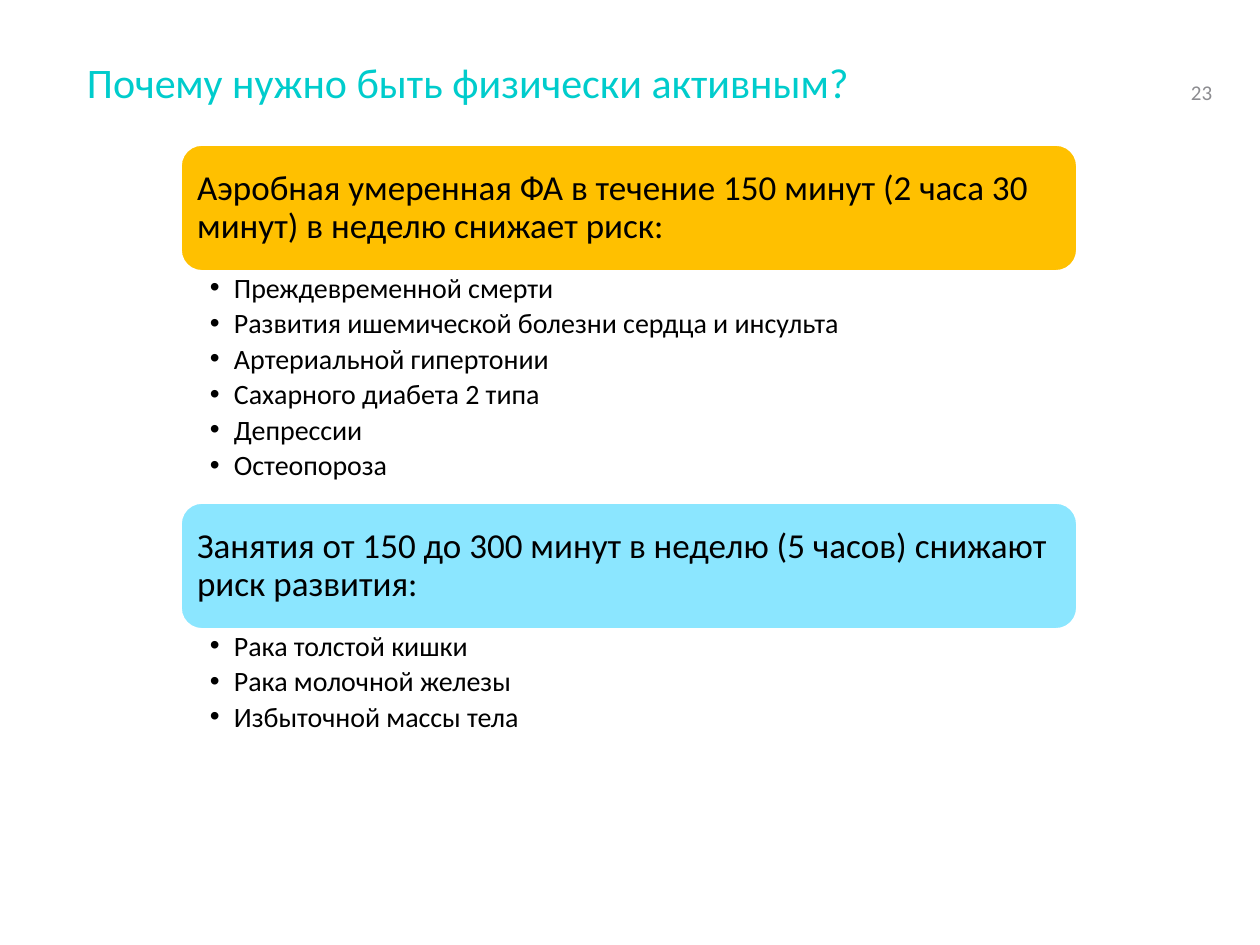
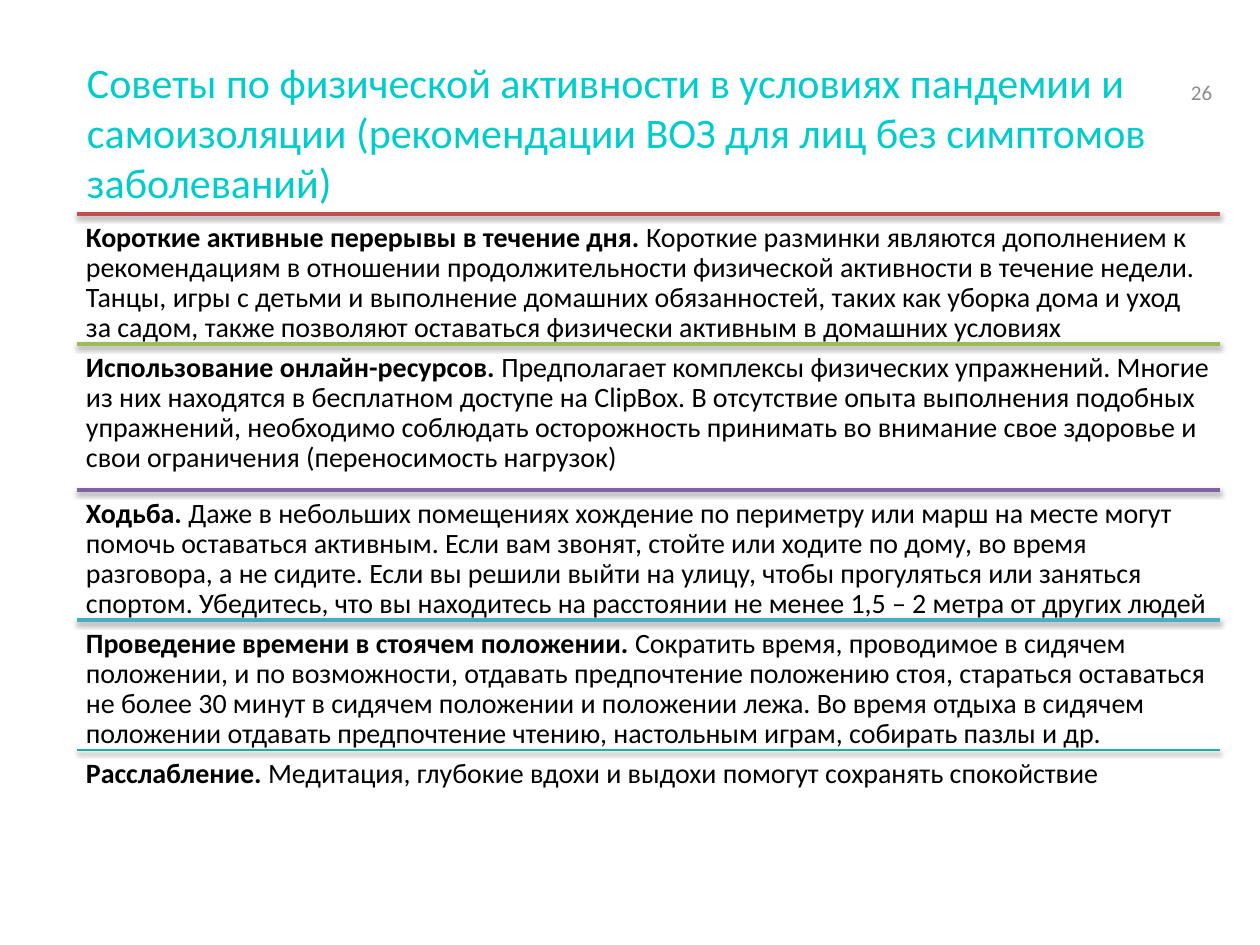
from lxml import etree
from pptx import Presentation
from pptx.dml.color import RGBColor
from pptx.enum.shapes import MSO_CONNECTOR, MSO_SHAPE
from pptx.enum.text import MSO_ANCHOR, PP_ALIGN
from pptx.oxml.ns import qn
from pptx.util import Emu, Pt

PX_PER_INCH = 126
FONT = "Calibri"
LEFT = PP_ALIGN.LEFT
TOP, MIDDLE, BOTTOM = MSO_ANCHOR.TOP, MSO_ANCHOR.MIDDLE, MSO_ANCHOR.BOTTOM
ROUNDED = MSO_SHAPE.ROUNDED_RECTANGLE
STRAIGHT = MSO_CONNECTOR.STRAIGHT

COLORS = {
    "title": "00CCCC",
    "number": "8C8C90",
    "text": "000000",
    "white": "FFFFFF",
    "amber": "FFC000",
    "sky": "8BE6FF",
    "red": "C0504D",
    "green": "9BBB59",
    "purple": "8064A2",
    "blue": "4BACC6",
    "teal": "1AB39F",
}

# Heading, card colour, height of the list below, list items
RISK_GROUPS = [
    ("Аэробная умеренная ФА в течение 150 минут (2 часа 30 минут) в неделю снижает риск:",
     "amber", 232,
     ["Преждевременной смерти",
      "Развития ишемической болезни сердца и инсульта",
      "Артериальной гипертонии",
      "Сахарного диабета 2 типа",
      "Депрессии",
      "Остеопороза"]),
    ("Занятия от 150 до 300 минут в неделю (5 часов) снижают риск развития:",
     "sky", 112,
     ["Рака толстой кишки",
      "Рака молочной железы",
      "Избыточной массы тела"]),
]

# Rule colour, rule width, row height, bold lead, advice
ADVICE_ROWS = [
    ("red", 2, 130, "Короткие активные перерывы в течение дня.",
     "Короткие разминки являются дополнением к рекомендациям в отношении "
     "продолжительности физической активности в течение недели. Танцы, игры с детьми "
     "и выполнение домашних обязанностей, таких как уборка дома и уход за садом, также "
     "позволяют оставаться физически активным в домашних условиях"),
    ("green", 2, 146, "Использование онлайн-ресурсов.",
     "Предполагает комплексы физических упражнений. Многие из них находятся в "
     "бесплатном доступе на ClipBox. В отсутствие опыта выполнения подобных "
     "упражнений, необходимо соблюдать осторожность принимать во внимание свое "
     "здоровье и свои ограничения (переносимость нагрузок)"),
    ("purple", 2, 130, "Ходьба.",
     "Даже в небольших помещениях хождение по периметру или марш на месте могут "
     "помочь оставаться активным. Если вам звонят, стойте или ходите по дому, во время "
     "разговора, а не сидите. Если вы решили выйти на улицу, чтобы прогуляться или "
     "заняться спортом. Убедитесь, что вы находитесь на расстоянии не менее "
     "1,5 – 2 метра от других людей"),
    ("blue", 2, 130, "Проведение времени в стоячем положении.",
     "Сократить время, проводимое в сидячем положении, и по возможности, отдавать "
     "предпочтение положению стоя, стараться оставаться не более 30 минут в сидячем "
     "положении и положении лежа. Во время отдыха в сидячем положении отдавать "
     "предпочтение чтению, настольным играм, собирать пазлы и др."),
    ("teal", 1, 130, "Расслабление.",
     "Медитация, глубокие вдохи и выдохи помогут сохранять спокойствие"),
]


def px(length):
    return Emu(round(length * 914400 / PX_PER_INCH))


def rgb(name):
    return RGBColor.from_string(COLORS[name])


# Text
def add_bullet(para, indent):
    properties = para._p.get_or_add_pPr()
    properties.set("marL", str(px(indent)))
    properties.set("indent", str(-px(indent)))
    etree.SubElement(properties, qn("a:buFont")).set("typeface", "Arial")
    etree.SubElement(properties, qn("a:buChar")).set("char", "•")


def write_text(shape, paragraphs, size=16, color="text", insets=(0, 0, 0, 0),
               anchor=TOP, wrap=True, line_spacing=None, space_after=0, bullet=0):
    """Each paragraph is a list of (text, bold) spans."""
    frame = shape.text_frame
    frame.word_wrap = wrap
    frame.vertical_anchor = anchor
    (frame.margin_left, frame.margin_top,
     frame.margin_right, frame.margin_bottom) = map(px, insets)
    for index, spans in enumerate(paragraphs):
        para = frame.add_paragraph() if index else frame.paragraphs[0]
        if bullet:
            add_bullet(para, bullet)
        para.alignment = LEFT
        para.space_after = Pt(space_after)
        if line_spacing:
            para.line_spacing = line_spacing
        for text, bold in spans:
            span = para.add_run()
            span.text = text
            span.font.name = FONT
            span.font.size = Pt(size)
            span.font.bold = bold
            span.font.color.rgb = rgb(color)


def add_text(page, area, paragraphs, **text_format):
    box = page.shapes.add_textbox(*map(px, area))
    write_text(box, paragraphs, **text_format)


# Shapes
def add_card(page, area, heading, color):
    card = page.shapes.add_shape(ROUNDED, *map(px, area))
    card.shadow.inherit = False
    card.fill.solid()
    card.fill.fore_color.rgb = rgb(color)
    card.line.color.rgb = rgb("white")
    card.line.width = Pt(1)
    write_text(card, [[(heading, False)]], size=20, insets=(10, 10, 10, 10),
               anchor=MIDDLE, line_spacing=0.9)


def add_rule(page, left, top, width, color, weight):
    rule = page.shapes.add_connector(STRAIGHT, px(left), px(top), px(left + width), px(top))
    rule.line.color.rgb = rgb(color)
    rule.line.width = Pt(weight)
    effects = etree.SubElement(rule._element.spPr, qn("a:effectLst"))
    shadow = etree.SubElement(effects, qn("a:outerShdw"), blurRad=str(Pt(3)),
                              dist=str(Pt(1.6)), dir="5400000", rotWithShape="0")
    shade = etree.SubElement(shadow, qn("a:srgbClr"), val=COLORS["text"])
    etree.SubElement(shade, qn("a:alpha"), val="38000")


# Pages
def add_page(deck, title, number):
    page = deck.slides.add_slide(deck.slide_layouts[6])
    add_text(page, (87, 50, 1086, 130), [[(title, False)]],
             size=24, color="title", insets=(0, 6, 0, 6))
    add_text(page, (1191, 50, 48, 60), [[(str(number), False)]], size=12,
             color="number", insets=(0, 5, 0, 5), anchor=BOTTOM, wrap=False)
    return page


def add_risk_groups(page, left=181, top=145, width=896, card_height=126):
    for heading, color, list_height, items in RISK_GROUPS:
        add_card(page, (left, top, width, card_height), heading, color)
        top += card_height
        add_text(page, (left, top, width, list_height),
                 [[(item, False)] for item in items], insets=(29, 3, 15, 3),
                 line_spacing=0.9, space_after=3, bullet=24)
        top += list_height


def add_advice_rows(page, left=77, top=214, width=1143):
    for color, weight, height, lead, advice in ADVICE_ROWS:
        add_rule(page, left, top, width, color, weight)
        add_text(page, (left, top, width, height),
                 [[(lead + " ", True), (advice, False)]],
                 insets=(9, 9, 9, 9), line_spacing=0.9)
        top += height


def main():
    deck = Presentation()
    deck.slide_width, deck.slide_height = px(1260), px(945)

    page = add_page(deck, "Почему нужно быть физически активным?", 23)
    add_risk_groups(page)

    page = add_page(deck, "Советы по физической активности в условиях пандемии и "
                    "самоизоляции (рекомендации ВОЗ для лиц без симптомов заболеваний)", 26)
    add_advice_rows(page)

    deck.save("out.pptx")


if __name__ == "__main__":
    main()
